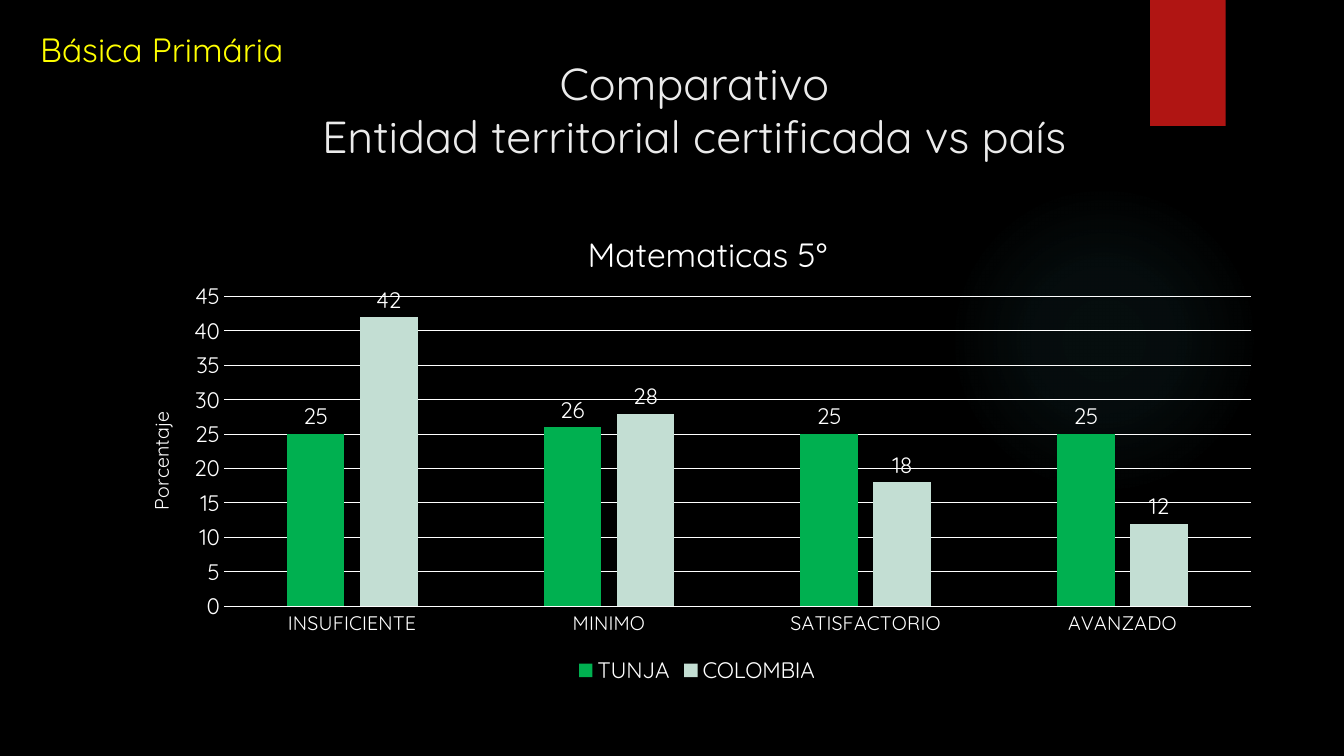
"""Build the slide comparing Tunja with Colombia in fifth-grade mathematics."""
from dataclasses import dataclass

from pptx import Presentation
from pptx.chart.data import CategoryChartData
from pptx.dml.color import RGBColor
from pptx.enum.chart import XL_CHART_TYPE, XL_LABEL_POSITION, XL_LEGEND_POSITION, XL_TICK_MARK
from pptx.enum.shapes import MSO_SHAPE
from pptx.enum.text import MSO_ANCHOR, PP_ALIGN
from pptx.oxml import parse_xml
from pptx.oxml.ns import nsdecls, qn
from pptx.util import Pt

COLUMNS = XL_CHART_TYPE.COLUMN_CLUSTERED
OUTSIDE_END = XL_LABEL_POSITION.OUTSIDE_END
BOTTOM = XL_LEGEND_POSITION.BOTTOM
NO_TICK = XL_TICK_MARK.NONE
OVAL = MSO_SHAPE.OVAL
RECTANGLE = MSO_SHAPE.RECTANGLE
TOP = MSO_ANCHOR.TOP
LEFT, CENTER = PP_ALIGN.LEFT, PP_ALIGN.CENTER

BLACK = RGBColor(0x00, 0x00, 0x00)
WHITE = RGBColor(0xFF, 0xFF, 0xFF)
PALE_GREY = RGBColor(0xEB, 0xEB, 0xEB)
YELLOW = RGBColor(0xFF, 0xFF, 0x00)
RED = RGBColor(0xB0, 0x15, 0x13)
TEAL = RGBColor(0x50, 0xB9, 0xC1)
GREEN = RGBColor(0x00, 0xB0, 0x50)
MINT = RGBColor(0xC3, 0xDE, 0xD3)
FONT = "Quicksand"

LEVELS = ("INSUFICIENTE", "MINIMO", "SATISFACTORIO", "AVANZADO")
GLOW_STOPS = ((0, 7), (36, 6), (69, 0))


@dataclass(frozen=True)
class Box:
    left: float
    top: float
    width: float
    height: float

    def lengths(self) -> tuple:
        return Pt(self.left), Pt(self.top), Pt(self.width), Pt(self.height)


@dataclass(frozen=True)
class Caption:
    lines: tuple
    box: Box
    size: float
    color: RGBColor
    align: PP_ALIGN


@dataclass(frozen=True)
class Region:
    name: str
    percentages: tuple
    color: RGBColor


CAPTIONS = (
    Caption(("Comparativo", "Entidad territorial certificada vs país"),
            Box(200.9, 36, 590.4, 110.2), 32, PALE_GREY, CENTER),
    Caption(("Básica Primária",), Box(21.6, 17.3, 193, 36), 24, YELLOW, LEFT),
)
REGIONS = (
    Region("TUNJA", (25, 26, 25, 25), GREEN),
    Region("COLOMBIA", (42, 28, 18, 12), MINT),
)
GLOW_BOX = Box(677.5, 131.8, 221.8, 221.8)
RIBBON_BOX = Box(821.5, 0, 54, 90)
CHART_BOX = Box(85.7, 146.2, 824.4, 345.6)


def style_font(font, size: float, color: RGBColor = WHITE) -> None:
    font.color.rgb = color
    values = {"name": FONT, "size": Pt(size), "bold": False}
    for attribute, value in values.items():
        setattr(font, attribute, value)


def add_block(slide, kind, box: Box, color: RGBColor):
    block = slide.shapes.add_shape(kind, *box.lengths())
    block.shadow.inherit = False
    block.fill.solid()
    block.fill.fore_color.rgb = color
    block.line.fill.background()
    return block


def add_glow(slide) -> None:
    glow = add_block(slide, OVAL, GLOW_BOX, TEAL)
    stops = "".join(
        f'<a:gs pos="{place * 1000}"><a:srgbClr val="{TEAL}">'
        f'<a:alpha val="{opacity * 1000}"/></a:srgbClr></a:gs>'
        for place, opacity in GLOW_STOPS
    )
    gradient = parse_xml(
        f'<a:gradFill {nsdecls("a")} rotWithShape="1"><a:gsLst>{stops}</a:gsLst>'
        '<a:path path="circle"><a:fillToRect l="50000" t="50000" r="50000" b="50000"/>'
        '</a:path></a:gradFill>'
    )
    properties = glow.element.spPr
    properties.replace(properties.find(qn("a:solidFill")), gradient)


def add_caption(slide, caption: Caption) -> None:
    frame = slide.shapes.add_textbox(*caption.box.lengths()).text_frame
    frame.word_wrap = True
    frame.vertical_anchor = TOP
    paragraph = frame.paragraphs[0]
    paragraph.alignment = caption.align
    for number, line in enumerate(caption.lines):
        if number:
            paragraph.add_line_break()
        run = paragraph.add_run()
        run.text = line
        style_font(run.font, caption.size, caption.color)


def place_part(part, **fractions: float) -> None:
    old = part.find(qn("c:layout"))
    if old is not None:
        part.remove(old)
    modes = "".join(f'<c:{axis}Mode val="edge"/>' for axis in "xy")
    target = '<c:layoutTarget val="inner"/>' if "w" in fractions else ""
    values = "".join(f'<c:{key} val="{value}"/>' for key, value in fractions.items())
    layout = parse_xml(
        f'<c:layout {nsdecls("c")}><c:manualLayout>{target}{modes}{values}'
        '</c:manualLayout></c:layout>'
    )
    part.insert(0 if part.find(qn("c:tx")) is None else 1, layout)


def write_title(title, text: str, size: float, x: float, y: float) -> None:
    run = title.text_frame.paragraphs[0].add_run()
    run.text = text
    style_font(run.font, size)
    place_part(title._element, x=x, y=y)


def style_line(line) -> None:
    line.color.rgb = WHITE
    line.width = Pt(0.75)


def style_axes(chart) -> None:
    levels, percent = chart.category_axis, chart.value_axis
    for axis, size in ((levels, 14), (percent, 16)):
        axis.major_tick_mark = axis.minor_tick_mark = NO_TICK
        style_font(axis.tick_labels.font, size)
    style_line(levels.format.line)
    percent.format.line.fill.background()
    style_line(percent.major_gridlines.format.line)
    scale = {"minimum_scale": 0, "maximum_scale": 45, "major_unit": 5}
    for attribute, value in scale.items():
        setattr(percent, attribute, value)
    write_title(percent.axis_title, "Porcentaje", 14, 0.02, 0.42)


def style_columns(chart) -> None:
    plot = chart.plots[0]
    values = {"gap_width": 219, "overlap": -27, "vary_by_categories": False}
    for attribute, value in values.items():
        setattr(plot, attribute, value)
    for columns, region in zip(plot.series, REGIONS):
        columns.format.fill.solid()
        columns.format.fill.fore_color.rgb = region.color
        labels = columns.data_labels
        labels.show_value = True
        labels.position = OUTSIDE_END
        style_font(labels.font, 16)


def add_comparison(slide) -> None:
    data = CategoryChartData()
    data.categories = LEVELS
    for region in REGIONS:
        data.add_series(region.name, region.percentages)
    chart = slide.shapes.add_chart(COLUMNS, *CHART_BOX.lengths(), data).chart
    style_font(chart.font, 10)
    write_title(chart.chart_title, "Matematicas 5°", 24, 0.4, 0.04)
    style_axes(chart)
    style_columns(chart)
    chart.has_legend = True
    chart.legend.position = BOTTOM
    chart.legend.include_in_layout = False
    style_font(chart.legend.font, 16)
    place_part(chart.element.find(".//" + qn("c:plotArea")), x=0.09, y=0.19, w=0.89, h=0.64)


def main() -> None:
    deck = Presentation()
    deck.slide_width, deck.slide_height = Pt(960), Pt(540)
    slide = deck.slides.add_slide(deck.slide_layouts[6])
    slide.background.fill.solid()
    slide.background.fill.fore_color.rgb = BLACK
    add_glow(slide)
    add_block(slide, RECTANGLE, RIBBON_BOX, RED)
    add_comparison(slide)
    for caption in CAPTIONS:
        add_caption(slide, caption)
    deck.save("out.pptx")


if __name__ == "__main__":
    main()
